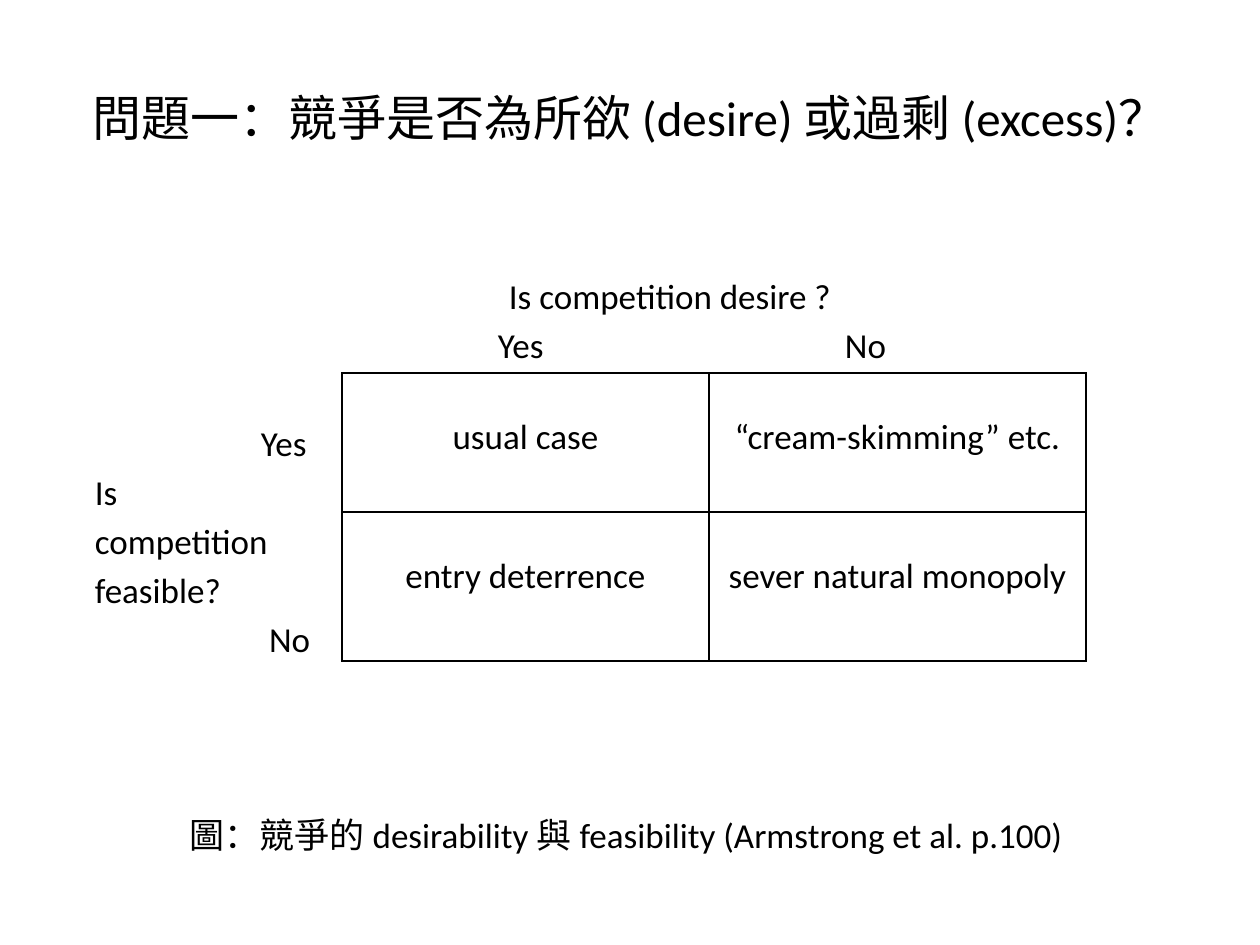
from dataclasses import dataclass

from lxml import etree
from pptx import Presentation
from pptx.dml.color import RGBColor
from pptx.enum.text import MSO_ANCHOR, PP_ALIGN
from pptx.oxml.ns import qn
from pptx.util import Emu, Pt

CENTER, LEFT = PP_ALIGN.CENTER, PP_ALIGN.LEFT
TOP, MIDDLE = MSO_ANCHOR.TOP, MSO_ANCHOR.MIDDLE
BLACK = RGBColor(0x00, 0x00, 0x00)
FONT = "Calibri"
BODY_SIZE = 20
PX_PER_INCH = 126
LINE_PITCH = 49

TABLE_LEFT, TABLE_TOP = 342, 373
COLUMN_WIDTHS = (367, 377)
ROW_HEIGHTS = (139, 149)
OUTCOMES = (
    ("usual case", "“cream-skimming” etc."),
    ("entry deterrence", "sever natural monopoly"),
)


@dataclass(frozen=True)
class Label:
    lines: tuple[str, ...]
    left: int
    top: int
    width: int
    height: int = LINE_PITCH
    align: PP_ALIGN = LEFT
    size: int = BODY_SIZE


LABELS = (
    Label(("問題一：競爭是否為所欲 (desire) 或過剩 (excess)？",), 76, 38, 1108, 158, CENTER, 28),
    Label(("Is competition desire ?",), 470, 271, 400, align=CENTER),
    Label(("Yes",), 498, 320, 100),
    Label(("No",), 845, 320, 100),
    Label(("Yes",), 261, 418, 75),
    Label(("Is", "competition", "feasible?"), 95, 467, 200, 3 * LINE_PITCH),
    Label(("No",), 269, 614, 70),
    Label(("圖：競爭的 desirability 與 feasibility (Armstrong et al. p.100)",),
          95, 810, 1062, align=CENTER),
)


def px(length: int) -> Emu:
    return Emu(round(length * 914400 / PX_PER_INCH))


def write(para, text: str, size: int, align: PP_ALIGN) -> None:
    para.alignment = align
    span = para.add_run()
    span.text = text
    span.font.name = FONT
    span.font.size = Pt(size)
    span.font.color.rgb = BLACK


def draw_label(page, label: Label) -> None:
    box = page.shapes.add_textbox(
        px(label.left), px(label.top), px(label.width), px(label.height))
    frame = box.text_frame
    frame.word_wrap = True
    frame.vertical_anchor = MIDDLE
    frame.margin_left = frame.margin_right = 0
    frame.margin_top = frame.margin_bottom = 0
    for index, line in enumerate(label.lines):
        para = frame.add_paragraph() if index else frame.paragraphs[0]
        if index:
            para.space_before = Pt(4)
        write(para, line, label.size, label.align)


def add_borders(cell) -> None:
    properties = cell._tc.get_or_add_tcPr()
    for index, side in enumerate(("lnL", "lnR", "lnT", "lnB")):
        border = etree.Element(qn(f"a:{side}"), w=str(Pt(1)))
        fill = etree.SubElement(border, qn("a:solidFill"))
        etree.SubElement(fill, qn("a:srgbClr"), val=str(BLACK))
        properties.insert(index, border)


def draw_matrix(page) -> None:
    table = page.shapes.add_table(
        len(ROW_HEIGHTS), len(COLUMN_WIDTHS), px(TABLE_LEFT), px(TABLE_TOP),
        px(sum(COLUMN_WIDTHS)), px(sum(ROW_HEIGHTS))).table
    table.first_row = False
    table.horz_banding = False
    for column, width in zip(table.columns, COLUMN_WIDTHS):
        column.width = px(width)
    for row, height, texts in zip(table.rows, ROW_HEIGHTS, OUTCOMES):
        row.height = px(height)
        for cell, text in zip(row.cells, texts):
            cell.fill.background()
            cell.vertical_anchor = TOP
            cell.margin_left = cell.margin_right = px(8)
            cell.margin_top = px(43)
            cell.margin_bottom = 0
            write(cell.text_frame.paragraphs[0], text, BODY_SIZE, CENTER)
            add_borders(cell)


def main() -> None:
    deck = Presentation()
    deck.slide_width = px(1260)
    deck.slide_height = px(945)
    page = deck.slides.add_slide(deck.slide_layouts[6])
    for label in LABELS:
        draw_label(page, label)
    draw_matrix(page)
    deck.save("out.pptx")


if __name__ == "__main__":
    main()
